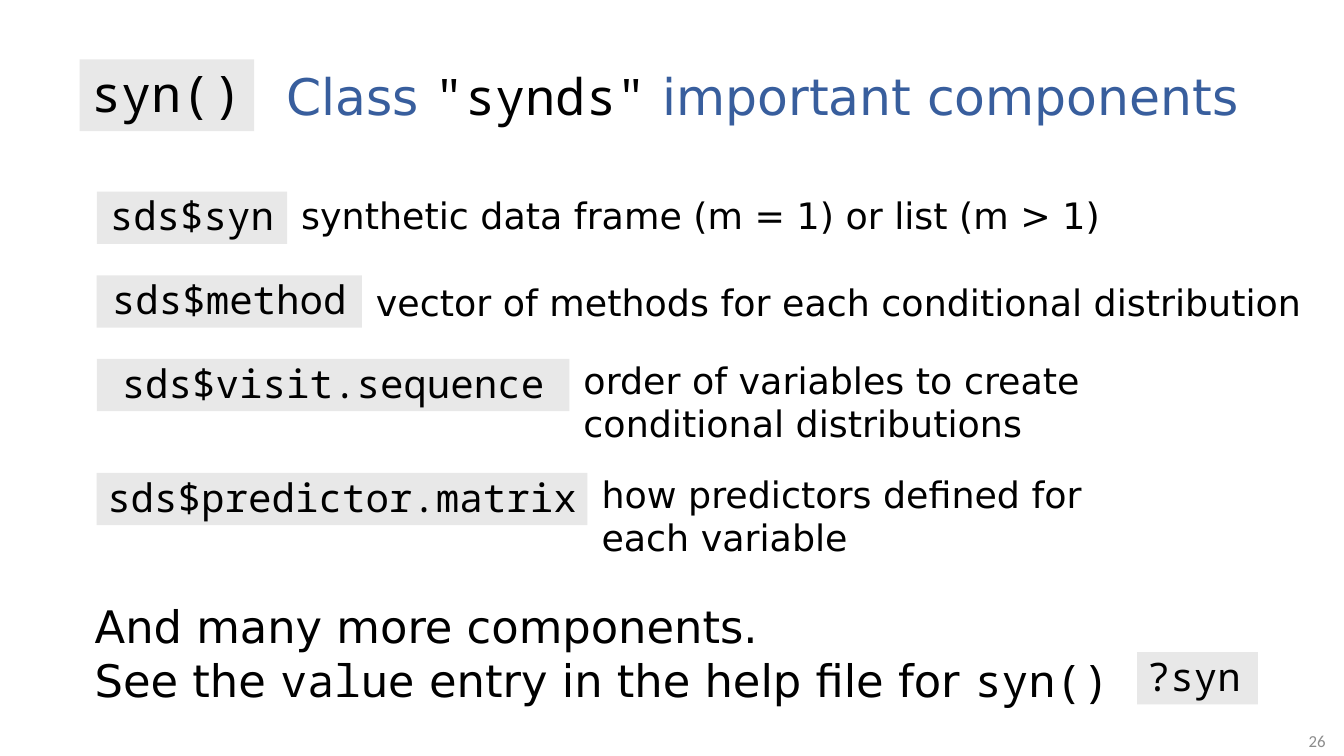
from pptx import Presentation
from pptx.util import Pt
from pptx.dml.color import RGBColor
from pptx.enum.shapes import MSO_SHAPE as Shape
from pptx.enum.text import MSO_ANCHOR as Anchor, MSO_AUTO_SIZE as AutoSize, PP_ALIGN as Align

COLORS = {"text": "000000", "title": "385E9D", "code_fill": "E8E8E8", "number": "8C8C8C"}
SANS, MONO = "DejaVu Sans", "Noto Sans Mono"

deck = Presentation()
deck.slide_width, deck.slide_height = Pt(960), Pt(540)
page = deck.slides.add_slide(deck.slide_layouts[5])


def add_span(para, text, size, font=SANS, color="text"):
    span = para.add_run()
    span.text = text
    span.font.size = Pt(size)
    span.font.name = font
    span.font.color.rgb = RGBColor.from_string(COLORS[color])


def add_code(text, left, top, width, height=37.4, size=28, align=Align.CENTER):
    box = page.shapes.add_shape(Shape.RECTANGLE, Pt(left), Pt(top), Pt(width), Pt(height))
    box.shadow.inherit = False
    box.fill.solid()
    box.fill.fore_color.rgb = RGBColor.from_string(COLORS["code_fill"])
    box.line.fill.background()
    frame = box.text_frame
    frame.word_wrap = False
    frame.vertical_anchor = Anchor.MIDDLE
    frame.margin_top, frame.margin_bottom = Pt(0), Pt(3.6)
    frame.paragraphs[0].alignment = align
    add_span(frame.paragraphs[0], text, size, MONO)


# Title
title = page.shapes.title
title.left, title.top, title.width, title.height = Pt(197.3), Pt(42.5), Pt(700.6), Pt(51.1)
title.text_frame.word_wrap = True
title.text_frame.auto_size = AutoSize.NONE
title.text_frame.vertical_anchor = Anchor.MIDDLE
heading = title.text_frame.paragraphs[0]
heading.alignment = Align.LEFT
add_span(heading, "Class ", 36, SANS, "title")
add_span(heading, "\"synds\"", 36, MONO)
add_span(heading, " important components", 36, SANS, "title")
add_code("syn()", 56.9, 42.5, 124.6, 51.1, 36)

# Components: code, its top and width, then description, its top, width and height
CODE_LEFT = 69.1
components = [
    ("sds$syn", 136.8, 136.1,
     "synthetic data frame (m = 1) or list (m > 1)", 134.6, 672.5, 39.6),
    ("sds$method", 196.6, 189.4,
     "vector of methods for each conditional distribution", 196.6, 692.6, 39.6),
    ("sds$visit.sequence", 256.3, 337.7,
     "order of variables to create conditional distributions", 252, 511.2, 67.7),
    ("sds$predictor.matrix", 337.7, 350.6,
     "how predictors defined for each variable", 333.4, 410.4, 72),
]
for code, code_top, code_width, description, top, width, height in components:
    add_code(code, CODE_LEFT, code_top, code_width)
    box = page.shapes.add_textbox(Pt(CODE_LEFT + code_width), Pt(top), Pt(width), Pt(height))
    box.text_frame.word_wrap = True
    box.text_frame.margin_left = Pt(10)
    add_span(box.text_frame.paragraphs[0], description, 26)

# Closing hint
hint = page.shapes.add_textbox(Pt(57.6), Pt(424.1), Pt(882.7), Pt(79.9)).text_frame
hint.word_wrap = True
hint.margin_left = Pt(10)
add_span(hint.paragraphs[0], "And many more components.", 32)
see_also = hint.add_paragraph()
for text, font in [("See the ", SANS), ("value", MONO),
                   (" entry in the help file for ", SANS), ("syn()", MONO)]:
    add_span(see_also, text, 32, font)
add_code("?syn", 812.2, 465.8, 86.4, align=Align.LEFT)

# Page number
number = page.shapes.add_textbox(Pt(738), Pt(514.8), Pt(216), Pt(28.8)).text_frame
number.word_wrap = True
number.vertical_anchor = Anchor.MIDDLE
number.paragraphs[0].alignment = Align.RIGHT
add_span(number.paragraphs[0], "26", 12, "Calibri", "number")

deck.save("out.pptx")
